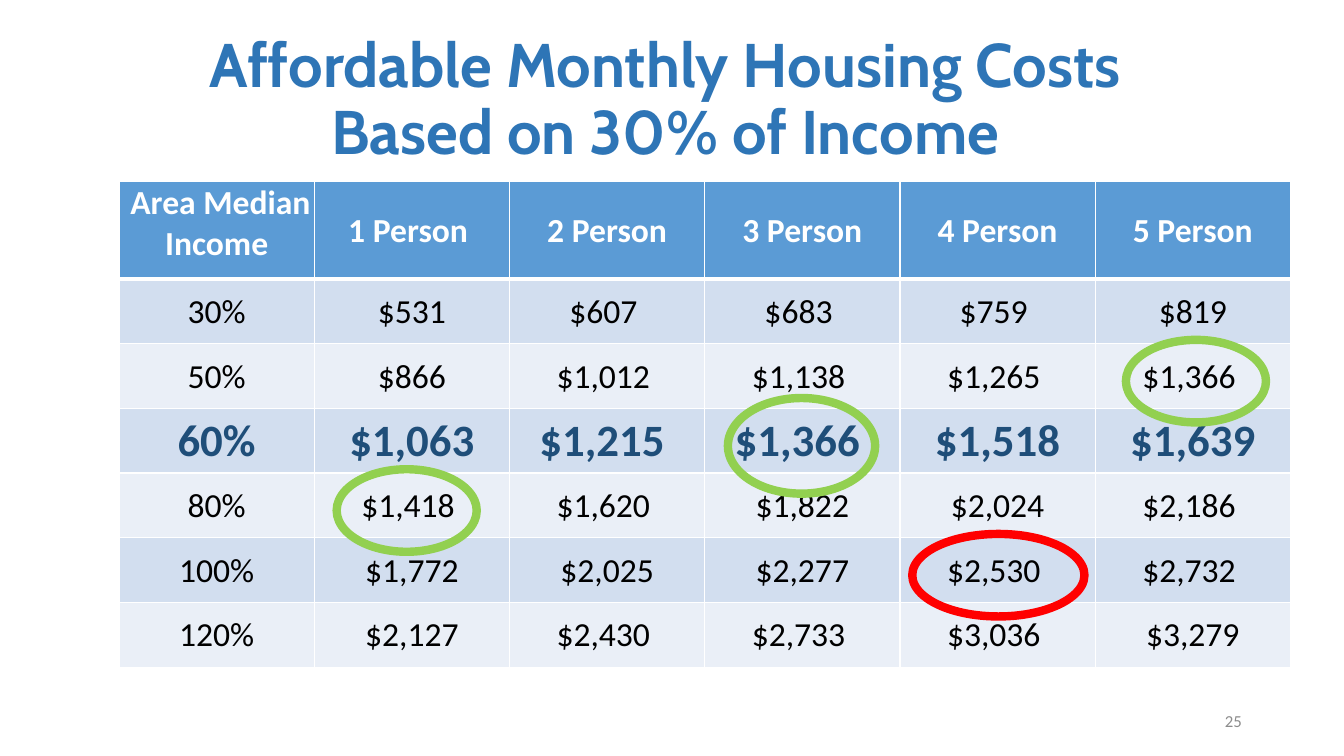
from dataclasses import dataclass

from lxml.etree import SubElement
from pptx import Presentation
from pptx.dml.color import RGBColor
from pptx.enum.shapes import MSO_SHAPE
from pptx.enum.text import MSO_ANCHOR, PP_ALIGN
from pptx.oxml.ns import qn
from pptx.util import Cm, Pt


@dataclass(frozen=True)
class Theme:
    title_font: str = "Cabin"
    body_font: str = "Calibri"
    title_size: int = 44
    cell_size: int = 24
    highlight_size: int = 32
    number_size: int = 12
    title: str = "2E75B6"
    header: str = "5B9BD5"
    dark_band: str = "D2DEEF"
    light_band: str = "EAEFF7"
    white: str = "FFFFFF"
    black: str = "000000"
    highlight: str = "1F4E79"
    number: str = "8C8C8C"
    match: str = "92D050"
    median: str = "FF0000"


@dataclass(frozen=True)
class Box:
    """A region of the slide, in centimetres."""
    left: float
    top: float
    width: float
    height: float

    def lengths(self):
        return Cm(self.left), Cm(self.top), Cm(self.width), Cm(self.height)


THEME = Theme()
HEADER_HEIGHT = 2.46
ROW_HEIGHT = 1.63
HIGHLIGHT_ROW = 3
COSTS = [
    [" Area Median Income", "1 Person ", "2 Person", "3 Person", "4 Person", "5 Person"],
    ["30%", "$531", "$607 ", "$683 ", "$759 ", "$819"],
    ["50%", "$866", "$1,012 ", "$1,138 ", "$1,265 ", "$1,366 "],
    ["60%", "$1,063", "$1,215 ", "$1,366 ", "$1,518", "$1,639"],
    ["80%", "$1,418 ", "$1,620 ", "$1,822", "$2,024", "$2,186 "],
    ["100%", "$1,772", "$2,025", "$2,277", "$2,530 ", "$2,732 "],
    ["120%", "$2,127", "$2,430 ", "$2,733 ", "$3,036 ", "$3,279"],
]
# row, column, sideways shift, width, height, colour
RINGS = [
    (5, 4, 0.02, 4.34, 2.08, THEME.median),
    (3, 3, -0.02, 3.71, 2.41, THEME.match),
    (4, 1, -0.13, 3.53, 2.08, THEME.match),
    (2, 5, 0.08, 3.53, 2.08, THEME.match),
]
RING_DROP = 0.13


def style_text(frame, align, font, size, color, bold=False):
    for para in frame.paragraphs:
        para.alignment = align
        for span in para.runs:
            span.font.name = font
            span.font.size = Pt(size)
            span.font.bold = bold
            span.font.color.rgb = RGBColor.from_string(color)


def add_text(page, box, text):
    frame = page.shapes.add_textbox(*box.lengths()).text_frame
    frame.word_wrap = True
    frame.vertical_anchor = MSO_ANCHOR.MIDDLE
    frame.text = text
    return frame


def add_title(page, box):
    frame = add_text(page, box, "Affordable Monthly Housing Costs \vBased on 30% of Income ")
    frame.paragraphs[0].line_spacing = 0.9
    style_text(frame, PP_ALIGN.CENTER, THEME.title_font, THEME.title_size, THEME.title, True)


def add_page_number(page, box):
    frame = add_text(page, box, "25")
    style_text(frame, PP_ALIGN.RIGHT, THEME.body_font, THEME.number_size, THEME.number)


def set_borders(cell, row):
    """White rules, heavier between the header and the body."""
    widths = {"lnL": 1, "lnR": 1, "lnT": 3 if row == 1 else 1, "lnB": 3 if row == 0 else 1}
    properties = cell._tc.get_or_add_tcPr()
    for position, (side, width) in enumerate(widths.items()):
        line = SubElement(properties, qn(f"a:{side}"), w=str(Pt(width)))
        fill = SubElement(line, qn("a:solidFill"))
        SubElement(fill, qn("a:srgbClr"), val=THEME.white)
        properties.insert(position, line)


def row_style(row):
    """Fill, text colour, text size and weight of a row."""
    if row == 0:
        return THEME.header, THEME.white, THEME.cell_size, True
    band = THEME.dark_band if row % 2 else THEME.light_band
    if row == HIGHLIGHT_ROW:
        return band, THEME.highlight, THEME.highlight_size, True
    return band, THEME.black, THEME.cell_size, False


def add_cost_table(page, box):
    table = page.shapes.add_table(len(COSTS), len(COSTS[0]), *box.lengths()).table
    for column in table.columns:
        column.width = Cm(box.width / len(COSTS[0]))
    for row, values in enumerate(COSTS):
        table.rows[row].height = Cm(ROW_HEIGHT if row else HEADER_HEIGHT)
        fill, color, size, bold = row_style(row)
        for column, value in enumerate(values):
            cell = table.cell(row, column)
            cell.text = value
            cell.margin_left = cell.margin_right = cell.margin_top = Cm(0.03)
            cell.margin_bottom = 0
            cell.vertical_anchor = MSO_ANCHOR.MIDDLE if row or column else MSO_ANCHOR.TOP
            cell.fill.solid()
            cell.fill.fore_color.rgb = RGBColor.from_string(fill)
            style_text(cell.text_frame, PP_ALIGN.CENTER, THEME.body_font, size, color, bold)
            set_borders(cell, row)


def add_rings(page, box):
    """Circle chosen cells of the table that fills the box."""
    column_width = box.width / len(COSTS[0])
    for row, column, shift, width, height, color in RINGS:
        center = box.left + (column + 0.5) * column_width + shift
        middle = box.top + HEADER_HEIGHT + (row - 0.5) * ROW_HEIGHT + RING_DROP
        place = Box(center - width / 2, middle - height / 2, width, height)
        ring = page.shapes.add_shape(MSO_SHAPE.OVAL, *place.lengths())
        ring.shadow.inherit = False
        ring.fill.background()
        ring.line.color.rgb = RGBColor.from_string(color)
        ring.line.width = Pt(6)


def main():
    deck = Presentation()
    deck.slide_width, deck.slide_height = Cm(33.87), Cm(19.05)
    page = deck.slides.add_slide(deck.slide_layouts[6])
    table_box = Box(3, 4.57, 29.52, HEADER_HEIGHT + 6 * ROW_HEIGHT)
    add_title(page, Box(2.34, 0.71, 29.21, 3.68))
    add_cost_table(page, table_box)
    add_page_number(page, Box(23.93, 17.65, 7.62, 1.02))
    add_rings(page, table_box)
    deck.save("out.pptx")


if __name__ == "__main__":
    main()
